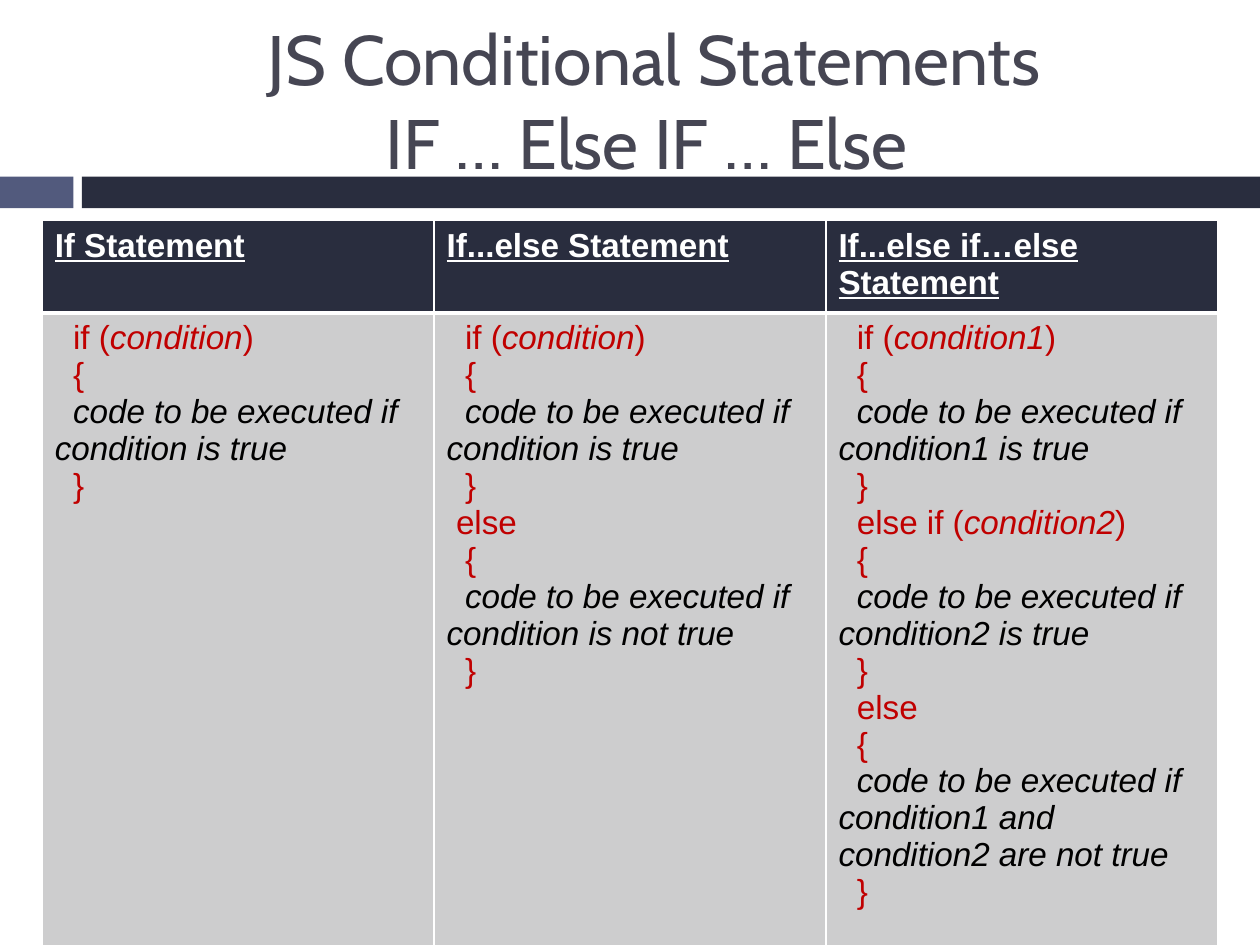
from lxml.etree import SubElement
from pptx import Presentation
from pptx.dml.color import RGBColor
from pptx.enum.shapes import MSO_SHAPE
from pptx.enum.text import MSO_ANCHOR, PP_ALIGN
from pptx.oxml.ns import qn
from pptx.util import Cm, Pt

WHITE = RGBColor(0xFF, 0xFF, 0xFF)
BLACK = RGBColor(0x00, 0x00, 0x00)
RED = RGBColor(0xC0, 0x00, 0x00)
NAVY = RGBColor(0x29, 0x2D, 0x3E)
SLATE = RGBColor(0x52, 0x5A, 0x7D)
GREY = RGBColor(0xCD, 0xCD, 0xCE)
TITLE_COLOR = RGBColor(0x46, 0x46, 0x53)

INDENT = Cm(0.37)
HALF_INDENT = Cm(0.19)
TITLE_LINES = [" JS Conditional Statements", "IF … Else IF … Else"]


def condition_line(keyword, condition):
    """Return the line that opens a test."""
    return INDENT, [(f"{keyword} (", RED, False), (condition, RED, True), (")", RED, False)]


def keyword_line(text, indent=INDENT):
    """Return a line of plain code."""
    return indent, [(text, RED, False)]


def block(condition):
    """Return the braces and the description of the code inside them."""
    description = f"code to be executed if {condition}"
    return [keyword_line("{"), (INDENT, [(description, BLACK, True)]), keyword_line("}")]


STATEMENTS = [
    ("If Statement", [condition_line("if", "condition"), *block("condition is true")]),
    ("If...else Statement", [
        condition_line("if", "condition"), *block("condition is true"),
        keyword_line("else", HALF_INDENT), *block("condition is not true"),
    ]),
    ("If...else if…else Statement", [
        condition_line("if", "condition1"), *block("condition1 is true"),
        condition_line("else if", "condition2"), *block("condition2 is true"),
        keyword_line("else"), *block("condition1 and condition2 are not true"),
    ]),
]


def add_run(paragraph, text, font_name, size, color, bold=False, italic=False, underline=False):
    """Add one formatted run to a paragraph."""
    run = paragraph.add_run()
    run.text = text
    font = run.font
    font.name, font.size, font.color.rgb = font_name, Pt(size), color
    font.bold, font.italic, font.underline = bold, italic, underline


def add_title(slide, left, top, width, height):
    """Add the centred two-line title."""
    frame = slide.shapes.add_textbox(left, top, width, height).text_frame
    frame.word_wrap = True
    frame.vertical_anchor = MSO_ANCHOR.MIDDLE
    paragraph = frame.paragraphs[0]
    paragraph.alignment = PP_ALIGN.CENTER
    for index, line in enumerate(TITLE_LINES):
        if index:
            paragraph.add_line_break()
        add_run(paragraph, line, "Cabin", 40, TITLE_COLOR)


def add_band(slide, left, top, width, height):
    """Add the short and the long bar below the title."""
    short, gap = Cm(1.48), Cm(0.17)
    long_start = short + gap
    for offset, length, color in ((0, short, SLATE), (long_start, width - long_start, NAVY)):
        bar = slide.shapes.add_shape(MSO_SHAPE.RECTANGLE, left + offset, top, length, height)
        bar.shadow.inherit = False
        bar.fill.solid()
        bar.fill.fore_color.rgb = color
        bar.line.fill.background()


def style_cell(cell, color, top_width, bottom_width):
    """Fill a cell and give it white borders."""
    properties = cell._tc.get_or_add_tcPr()
    widths = {"a:lnL": 1, "a:lnR": 1, "a:lnT": top_width, "a:lnB": bottom_width}
    for tag, width in widths.items():
        border = SubElement(properties, qn(tag), w=str(Pt(width)))
        fill = SubElement(border, qn("a:solidFill"))
        SubElement(fill, qn("a:srgbClr"), val=str(WHITE))
    cell.fill.solid()
    cell.fill.fore_color.rgb = color


def fill_code_cell(cell, lines):
    """Write the code lines, one paragraph each."""
    frame = cell.text_frame
    for index, (indent, runs) in enumerate(lines):
        paragraph = frame.add_paragraph() if index else frame.paragraphs[0]
        properties = paragraph._p.get_or_add_pPr()
        properties.set("marL", "0")
        properties.set("indent", str(indent))
        for text, color, italic in runs:
            add_run(paragraph, text, "Arial", 19, color, italic=italic)


def add_statement_table(slide, left, top, width, height):
    """Add the table with one column for each statement."""
    table = slide.shapes.add_table(2, len(STATEMENTS), left, top, width, height).table
    table.horz_banding = False
    for row in table.rows:
        row.height = Cm(1.04)
    for index, (heading, lines) in enumerate(STATEMENTS):
        header, body = table.cell(0, index), table.cell(1, index)
        style_cell(header, NAVY, 1, 3)
        style_cell(body, GREY, 3, 1)
        add_run(header.text_frame.paragraphs[0], heading, "Arial", 19, WHITE,
                bold=True, underline=True)
        fill_code_cell(body, lines)


def main():
    """Build the slide and save it."""
    presentation = Presentation()
    presentation.slide_width, presentation.slide_height = Cm(25.4), Cm(19.05)
    slide = presentation.slides.add_slide(presentation.slide_layouts[6])
    add_band(slide, 0, Cm(3.56), presentation.slide_width, Cm(0.64))
    add_title(slide, Cm(1.7), Cm(0.64), Cm(22.66), Cm(2.74))
    add_statement_table(slide, Cm(0.85), Cm(4.45), Cm(23.7), Cm(14.17))
    presentation.save("out.pptx")


if __name__ == "__main__":
    main()
